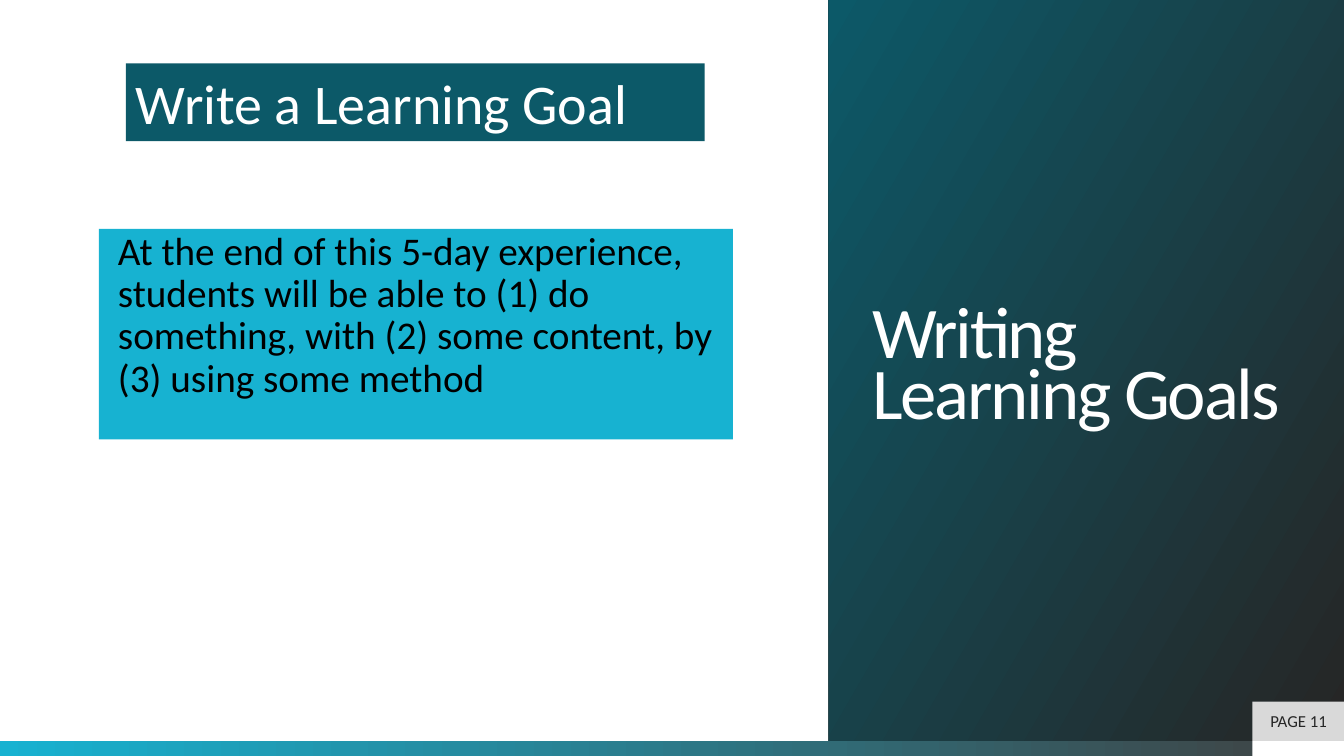
from dataclasses import dataclass
from typing import Optional

from pptx import Presentation
from pptx.dml.color import RGBColor
from pptx.enum.shapes import MSO_SHAPE
from pptx.enum.text import MSO_ANCHOR, MSO_AUTO_SIZE, PP_ALIGN
from pptx.util import Inches, Pt

WHITE = RGBColor(0xFF, 0xFF, 0xFF)
BLACK = RGBColor(0x00, 0x00, 0x00)
CYAN = RGBColor(0x17, 0xB2, 0xD1)
TEAL = RGBColor(0x0C, 0x59, 0x68)
GRAY = RGBColor(0x40, 0x40, 0x40)
DARK = RGBColor(0x26, 0x26, 0x26)
LIGHT = RGBColor(0xD9, 0xD9, 0xD9)
FONT = "Calibri"


@dataclass
class Gradient:
    stops: tuple[tuple[float, RGBColor], tuple[float, RGBColor]]
    clockwise: float = 0


@dataclass
class Label:
    text: str
    size: float
    color: RGBColor
    anchor: MSO_ANCHOR = MSO_ANCHOR.MIDDLE
    align: PP_ALIGN = PP_ALIGN.LEFT
    side: float = 0.1
    edge: float = 0.05
    line_spacing: float = 1.0
    tracking: float = 0
    grow: bool = False


@dataclass
class Panel:
    left: float
    top: float
    width: float
    height: float
    fill: Optional[RGBColor | Gradient] = None
    label: Optional[Label] = None


PANELS = [
    Panel(0, 7.35, 13.33, 0.15, Gradient(((0, CYAN), (1, GRAY)))),
    Panel(12.42, 7.35, 0.92, 0.15, WHITE),
    Panel(8.22, 0, 5.12, 7.35, Gradient(((0.01, DARK), (1, TEAL)), 210),
          Label("Writing Learning Goals", 52, WHITE, side=0.43,
                line_spacing=0.7, tracking=-1.5)),
    Panel(12.42, 6.96, 0.92, 0.39, LIGHT,
          Label("PAGE 11", 12, DARK, align=PP_ALIGN.CENTER)),
    Panel(0.98, 2.27, 6.29, 2.09, CYAN),
    Panel(0.98, 2.27, 6.29, 1.73, None,
          Label("At the end of this 5-day experience, students will be able to "
                "(1) do something, with (2) some content, by (3) using some method",
                28, BLACK, side=0.19, edge=0, line_spacing=0.9)),
    Panel(1.25, 0.63, 5.74, 0.77, TEAL,
          Label("Write a Learning Goal", 40, WHITE, MSO_ANCHOR.TOP, grow=True)),
]


def paint(sp, fill: RGBColor | Gradient) -> None:
    if isinstance(fill, Gradient):
        sp.fill.gradient()
        sp.fill.gradient_angle = (360 - fill.clockwise) % 360
        for stop, (position, color) in zip(sp.fill.gradient_stops, fill.stops):
            stop.position = position
            stop.color.rgb = color
    else:
        sp.fill.solid()
        sp.fill.fore_color.rgb = fill


def write(sp, label: Label) -> None:
    tf = sp.text_frame
    tf.word_wrap = True
    tf.auto_size = MSO_AUTO_SIZE.SHAPE_TO_FIT_TEXT if label.grow else MSO_AUTO_SIZE.NONE
    tf.vertical_anchor = label.anchor
    tf.margin_left = tf.margin_right = Inches(label.side)
    tf.margin_top = tf.margin_bottom = Inches(label.edge)
    p = tf.paragraphs[0]
    p.alignment = label.align
    p.line_spacing = label.line_spacing
    r = p.add_run()
    r.text = label.text
    r.font.name = FONT
    r.font.size = Pt(label.size)
    r.font.color.rgb = label.color
    if label.tracking:
        r._r.get_or_add_rPr().set("spc", str(round(label.tracking * 100)))


def draw(s, panel: Panel) -> None:
    box = [Inches(v) for v in (panel.left, panel.top, panel.width, panel.height)]
    if panel.fill is None:
        sp = s.shapes.add_textbox(*box)
    else:
        sp = s.shapes.add_shape(MSO_SHAPE.RECTANGLE, *box)
        sp.shadow.inherit = False
        sp.line.fill.background()
        paint(sp, panel.fill)
    if panel.label:
        write(sp, panel.label)


def main() -> None:
    prs = Presentation()
    prs.slide_width = Inches(13.33)
    prs.slide_height = Inches(7.5)
    s = prs.slides.add_slide(prs.slide_layouts[6])
    for panel in PANELS:
        draw(s, panel)
    prs.save("out.pptx")


if __name__ == "__main__":
    main()
